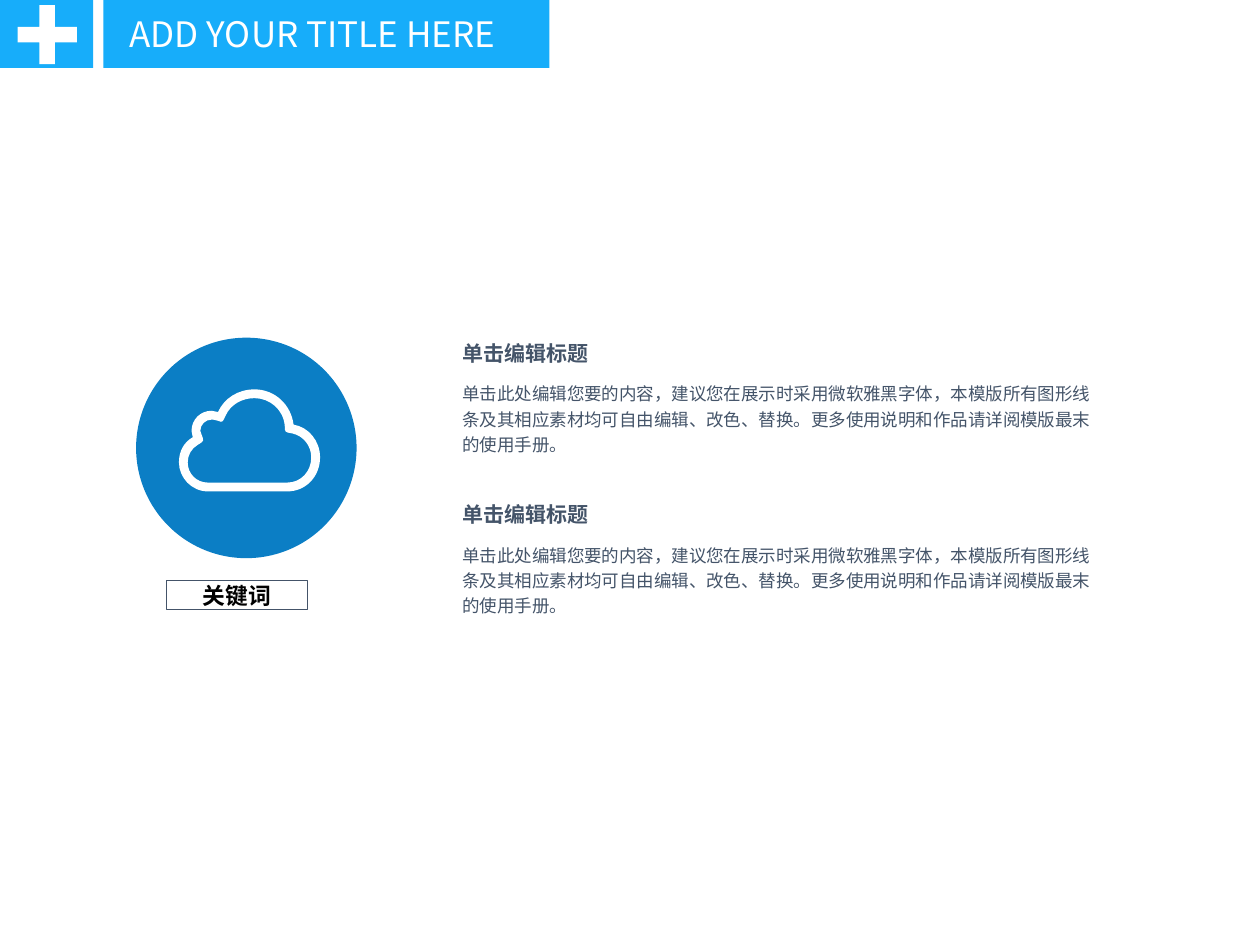
from lxml import etree
from pptx import Presentation
from pptx.dml.color import RGBColor
from pptx.enum import shapes, text
from pptx.oxml import ns
from pptx.util import Inches, Pt

COLORS = {
    "banner": "17ADFA",
    "disc": "0B7EC5",
    "slate": "445469",
    "white": "FFFFFF",
    "black": "000000",
}
BODY = (
    "单击此处编辑您要的内容，建议您在展示时采用微软雅黑字体，"
    "本模版所有图形线条及其相应素材均可自由编辑、改色、替换。"
    "更多使用说明和作品请详阅模版最末的使用手册。"
)

# Each contour: start point, then lines (x, y) or cubic curves (six numbers)
CLOUD_OUTER = [
    (2.33, 3.37),
    (2.31, 3.21, 2.18, 3.09, 2.02, 3.09),
    (1.89, 3.09, 1.78, 3.16, 1.73, 3.27),
    (1.71, 3.27, 1.7, 3.26, 1.68, 3.26),
    (1.59, 3.26, 1.52, 3.33, 1.52, 3.42),
    (1.52, 3.44, 1.53, 3.45, 1.53, 3.47),
    (1.46, 3.51, 1.42, 3.58, 1.42, 3.67),
    (1.42, 3.79, 1.52, 3.9, 1.65, 3.9),
    (2.28, 3.9),
    (2.43, 3.9, 2.54, 3.78, 2.54, 3.63),
    (2.54, 3.5, 2.45, 3.39, 2.33, 3.37),
]
CLOUD_INNER = [
    (2.28, 3.83),
    (1.65, 3.83),
    (1.56, 3.83, 1.49, 3.76, 1.49, 3.67),
    (1.49, 3.61, 1.52, 3.56, 1.57, 3.53),
    (1.62, 3.5, 1.62, 3.5, 1.6, 3.45),
    (1.59, 3.44, 1.59, 3.43, 1.59, 3.42),
    (1.59, 3.37, 1.63, 3.33, 1.68, 3.33),
    (1.68, 3.33, 1.7, 3.33, 1.73, 3.34),
    (1.77, 3.36, 1.77, 3.34, 1.79, 3.3),
    (1.83, 3.21, 1.92, 3.16, 2.02, 3.16),
    (2.14, 3.16, 2.25, 3.25, 2.26, 3.38),
    (2.26, 3.43, 2.26, 3.43, 2.32, 3.44),
    (2.41, 3.46, 2.47, 3.54, 2.47, 3.63),
    (2.47, 3.74, 2.39, 3.83, 2.28, 3.83),
]

prs = Presentation()
prs.slide_width, prs.slide_height = Inches(10), Inches(7.5)
slide = prs.slides.add_slide(prs.slide_layouts[6])


def paint(shape, fill=None, line=None):
    """Give a shape a flat fill and an optional thin outline, without shadow."""
    shape.shadow.inherit = False
    if fill:
        shape.fill.solid()
        shape.fill.fore_color.rgb = RGBColor.from_string(COLORS[fill])
    else:
        shape.fill.background()
    if line:
        shape.line.color.rgb = RGBColor.from_string(COLORS[line])
        shape.line.width = Pt(0.75)
    else:
        shape.line.fill.background()


def write(shape, words, size, color, font="Arial", bold=False, inset=0):
    """Fill a shape with one styled run and return its paragraph."""
    frame = shape.text_frame
    frame.word_wrap = True
    frame.auto_size = text.MSO_AUTO_SIZE.SHAPE_TO_FIT_TEXT
    frame.margin_left = frame.margin_right = Inches(inset)
    frame.margin_top = frame.margin_bottom = Inches(inset / 2)
    paragraph = frame.paragraphs[0]
    run = paragraph.add_run()
    run.text = words
    run.font.size, run.font.bold, run.font.name = Pt(size), bold, font
    run.font.color.rgb = RGBColor.from_string(COLORS[color])
    etree.SubElement(run.font._element, ns.qn("a:ea")).set("typeface", font)
    return paragraph


# Icon with its keyword
disc = slide.shapes.add_shape(
    shapes.MSO_SHAPE.OVAL, Inches(1.08), Inches(2.68), Inches(1.75), Inches(1.75))
paint(disc, "disc")

outer, inner = (
    [(Inches(segment[-2]), Inches(segment[-1])) for segment in contour]
    for contour in (CLOUD_OUTER, CLOUD_INNER))
builder = slide.shapes.build_freeform(*outer[0])
builder.add_line_segments(outer[1:], close=True)
builder.move_to(*inner[0])
builder.add_line_segments(inner[1:], close=True)
cloud = builder.convert_to_shape()
paint(cloud, "white")

# Bend the straight segments that have control points
sides = list(cloud._element.iter(ns.qn("a:lnTo")))
for side, segment in zip(sides, CLOUD_OUTER[1:] + CLOUD_INNER[1:]):
    if len(segment) == 2:
        continue
    curve = etree.Element(ns.qn("a:cubicBezTo"))
    for x, y in zip(segment[::2], segment[1::2]):
        point = etree.SubElement(curve, ns.qn("a:pt"))
        point.set("x", str(Inches(x) - cloud.left))
        point.set("y", str(Inches(y) - cloud.top))
    side.getparent().replace(side, curve)

keyword = slide.shapes.add_shape(
    shapes.MSO_SHAPE.RECTANGLE, Inches(1.32), Inches(4.61), Inches(1.12), Inches(0.23))
paint(keyword, line="slate")
write(keyword, "关键词", 13, "black", bold=True).alignment = text.PP_ALIGN.CENTER

# Two text blocks, each a heading over a paragraph
for top in (2.7, 3.98):
    body = slide.shapes.add_textbox(
        Inches(3.67), Inches(top + 0.31), Inches(5), Inches(0.64))
    write(body, BODY, 10, "slate").line_spacing = 1.2
    heading = slide.shapes.add_textbox(
        Inches(3.67), Inches(top), Inches(1.06), Inches(0.2))
    write(heading, "单击编辑标题", 12, "slate", bold=True)

# Title banner
for left, width in ((0, 0.74), (0.82, 3.54)):
    banner = slide.shapes.add_shape(
        shapes.MSO_SHAPE.RECTANGLE, Inches(left), 0, Inches(width), Inches(0.54))
    paint(banner, "banner")

plus = slide.shapes.add_shape(
    shapes.MSO_SHAPE.CROSS, Inches(0.14), Inches(0.04), Inches(0.47), Inches(0.47))
plus.adjustments[0] = 0.37
paint(plus, "white")

title = slide.shapes.add_textbox(
    Inches(0.93), Inches(0.05), Inches(3.33), Inches(0.44))
write(title, "ADD YOUR TITLE HERE", 20, "white", "Noto Sans CJK SC", inset=0.1)

prs.save("out.pptx")
